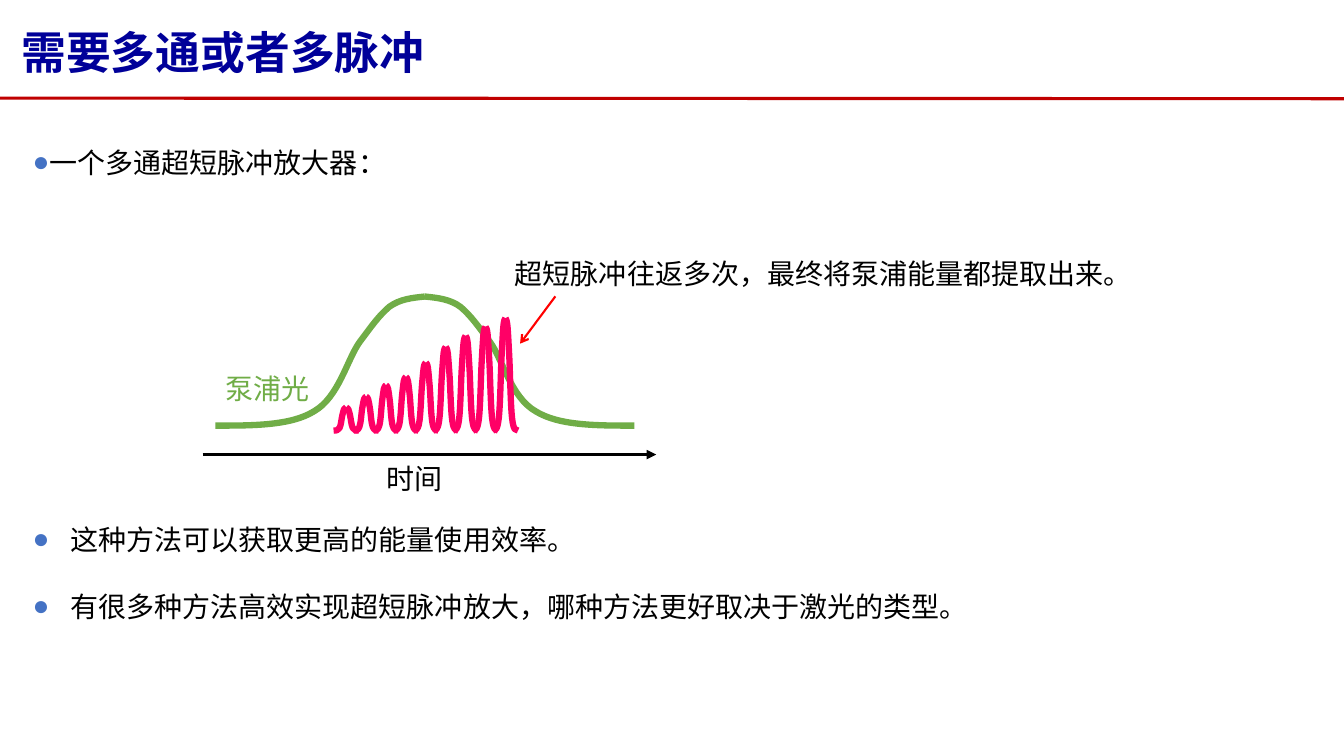
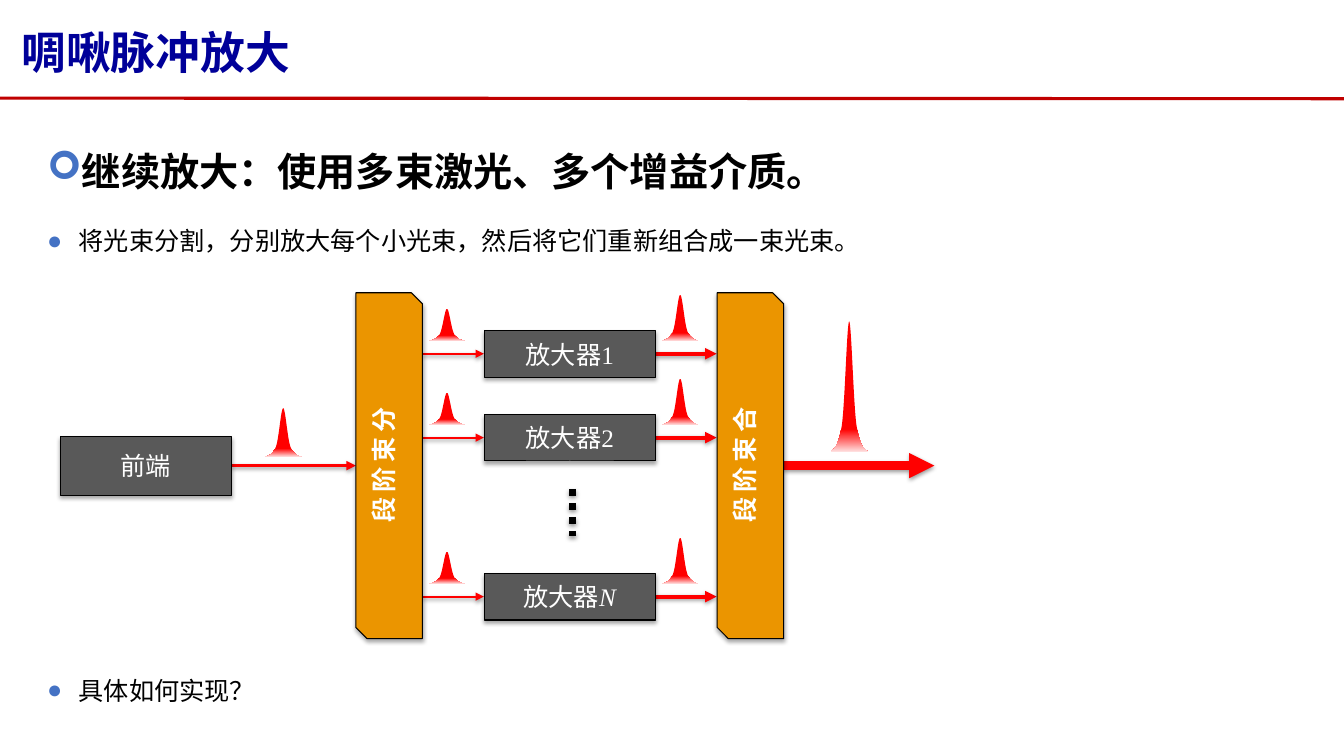
from dataclasses import dataclass

from pptx import Presentation
from pptx.dml.color import RGBColor
from pptx.enum.dml import MSO_LINE
from pptx.enum.shapes import MSO_CONNECTOR, MSO_SHAPE
from pptx.enum.text import MSO_ANCHOR, MSO_AUTO_SIZE, PP_ALIGN
from pptx.oxml import parse_xml
from pptx.oxml.ns import nsdecls
from pptx.util import Pt

rgb = RGBColor.from_string


@dataclass(frozen=True)
class Theme:
    font: str = "Noto Sans CJK SC"
    latin: str = "Times New Roman"
    symbol: str = "Wingdings"
    navy: RGBColor = rgb("000099")
    rule: RGBColor = rgb("C00000")
    bullet: RGBColor = rgb("4472C4")
    black: RGBColor = rgb("000000")
    white: RGBColor = rgb("FFFFFF")
    red: RGBColor = rgb("FF0000")
    pale: RGBColor = rgb("FFDADA")
    pink: RGBColor = rgb("FF0066")
    green: RGBColor = rgb("70AD47")
    grey: RGBColor = rgb("595959")
    orange: RGBColor = rgb("EB9500")
    title: int = 32
    heading: int = 28
    body: int = 20
    small: int = 18


T = Theme()

# Bezier points from the foot (0, 0) to the crest (1, 1)
BELL = [(0, 0), (.18, 0), (.36, 0), (.47, .11), (.59, .22), (.63, .52), (.69, .65),
        (.75, .78), (.78, .85), (.83, .92), (.88, .98), (.94, .99), (1, 1)]
SPIKE = [(0, 0), (.22, .02), (.42, .04), (.6, .2), (.77, .37), (.88, 1), (1, 1)]
SPIKE += [(2 - x, y) for x, y in SPIKE[-2::-1]]


def write(p, text, color, **fmt):
    """Add a run to p; fmt holds font attributes."""
    r = p.add_run()
    r.text = text
    r.font.color.rgb = color
    for name, value in {"name": T.font, **fmt}.items():
        setattr(r.font, name, value)
    r.font._element.append(parse_xml(f'<a:ea {nsdecls("a")} typeface="{T.font}"/>'))


def add_curve(s, profile, left, base, width, height, closed=False):
    """Draw Bezier points as a freeform; a negative width mirrors it."""
    points = [(Pt(left + x * width), Pt(base - y * height)) for x, y in profile]
    builder = s.shapes.build_freeform(*points[0])
    builder.add_line_segments(points[1:], close=closed)
    sp = builder.convert_to_shape()
    sp.shadow.inherit = False
    # Join every three line segments into one cubic segment
    segments = sp._element.xpath(".//a:lnTo")[:len(profile) - 1]
    for i in range(0, len(segments), 3):
        cubic = parse_xml(f'<a:cubicBezTo {nsdecls("a")}/>')
        segments[i].addprevious(cubic)
        for segment in segments[i:i + 3]:
            cubic.append(segment[0])
            segment.getparent().remove(segment)
    return sp


prs = Presentation()
prs.slide_width, prs.slide_height = Pt(960), Pt(540)

# Shared title place
layout = prs.slide_layouts[5]
title = layout.placeholders[0]
for name, value in dict(left=8, top=8.6, width=943, height=61.2).items():
    setattr(title, name, Pt(value))

slides = []
for heading in ("需要多通或者多脉冲", "啁啾脉冲放大"):
    s = prs.slides.add_slide(layout)
    tf = s.shapes.title.text_frame
    tf.auto_size, tf.vertical_anchor = MSO_AUTO_SIZE.NONE, MSO_ANCHOR.MIDDLE
    p = tf.paragraphs[0]
    p.alignment, p.line_spacing = PP_ALIGN.LEFT, 0.9
    write(p, heading, T.navy, size=Pt(T.title), bold=True)
    slides.append(s)
multipass, chirped = slides

# Pump and amplified pulse train: centre, base, half width, height, colour
bells = [(303.5, 304, 149.6, 92.2, T.green)]
bells += [(247.3 + 14.22 * i, 307.6, 9, h, T.pink)
          for i, h in enumerate((16.7, 24.2, 32.4, 38.4, 48.6, 59.8, 67.7, 74.2, 80.4))]
for centre, base, width, height, color in bells:
    for side in (1, -1):
        sp = add_curve(multipass, BELL, centre - side * width, base, side * width, height)
        sp.fill.background()
        sp.line.color.rgb, sp.line.width = color, Pt(4.5)

# Lines: x1, y1, x2, y2, colour, width, arrowhead, shadow
AXIS = 332.6
ROWS = {"1": 252.7, "N": 426.2, "2": 312.6}
lines = [
    (multipass, 0, 70.1, 960, 70.5, T.rule, 2.25, None, False),
    (multipass, 144.7, 324.7, 468.7, 324.7, T.black, 2.25, "triangle", False),
    (multipass, 396.7, 211.7, 371.5, 245.5, T.red, 1.5, "arrow", False),
    (chirped, 165.6, AXIS, 254.2, AXIS, T.red, 2.25, "triangle", True),
    (chirped, 560.2, AXIS, 667.4, AXIS, T.red, 6, "triangle", True),
    (chirped, 409, 349.2, 409, 383, T.black, 5, None, True),
]
for y in ROWS.values():
    lines += [(chirped, 302.4, y, 345.6, y, T.red, 1.5, "triangle", True),
              (chirped, 463.7, y, 511.9, y, T.red, 2.75, "triangle", True)]
drawn, effects = [], []
for s, x1, y1, x2, y2, color, width, head, shadow in lines:
    ln = s.shapes.add_connector(MSO_CONNECTOR.STRAIGHT, Pt(x1), Pt(y1), Pt(x2), Pt(y2))
    ln.line.color.rgb, ln.line.width = color, Pt(width)
    if shadow and not head:
        ln.line.dash_style = MSO_LINE.ROUND_DOT
    if head:
        ln.line._get_or_add_ln().append(
            parse_xml(f'<a:tailEnd {nsdecls("a")} type="{head}"/>'))
    drawn.append(ln)
    effects.append((ln, 38 if shadow else 0, 1.6))

# The title rule belongs to the layout
layout.shapes._spTree.append(drawn[0]._element)

# Blocks: kind, place, fill, rotation, label, suffix
blocks = [(MSO_SHAPE.ROUNDED_RECTANGLE, (43, 311.8, 122.4, 41.8), T.grey, 0, "前端", "")]
blocks += [(MSO_SHAPE.SNIP_2_DIAG_RECTANGLE, (x, 308.9, 247, 47.5), T.orange, 270, label, "")
           for x, label in ((154.5, "分束阶段"), (412.6, "合束阶段"))]
blocks += [(MSO_SHAPE.RECTANGLE, (345.8, y - 16.5, 122.4, 33.2), T.grey, 0, "放大器", n)
           for n, y in ROWS.items()]
for kind, place, fill, rotation, label, suffix in blocks:
    sp = chirped.shapes.add_shape(kind, *map(Pt, place))
    if kind == MSO_SHAPE.ROUNDED_RECTANGLE:
        sp.adjustments[0] = 0
    sp.fill.solid()
    sp.fill.fore_color.rgb = fill
    sp.line.color.rgb, sp.line.width = T.black, Pt(0.75)
    tf = sp.text_frame
    tf.word_wrap, tf.vertical_anchor = True, MSO_ANCHOR.MIDDLE
    if rotation:
        sp.rotation = rotation
        sp._element.spPr.xfrm.set("flipH", "1")
        tf._txBody.bodyPr.set("vert", "eaVert")
    p = tf.paragraphs[0]
    p.alignment = PP_ALIGN.CENTER
    write(p, label, T.white, size=Pt(T.small), bold=bool(rotation))
    if suffix:
        write(p, suffix, T.white, size=Pt(T.small), name=T.latin, italic=suffix == "N")
    effects.append((sp, 35, 1.8))

# Soft shadow, or none where alpha is 0
for sp, alpha, distance in effects:
    shadow = (f'<a:outerShdw blurRad="{Pt(3.1)}" dist="{Pt(distance)}" dir="5400000" '
              f'rotWithShape="0"><a:srgbClr val="000000"><a:alpha val="{alpha * 1000}"/>'
              '</a:srgbClr></a:outerShdw>') if alpha else ""
    sp._element.spPr.append(
        parse_xml(f'<a:effectLst {nsdecls("a")}>{shadow}</a:effectLst>'))

# Laser pulses: left, base, height
spikes = [(189.2, 326.3, 34.9), (593.5, 322.4, 92.9)]
for y in ROWS.values():
    spikes += [(306.2, y - 9.2, 23), (472.8, y - 9.2, 33)]
for left, base, height in spikes:
    sp = add_curve(chirped, SPIKE, left, base, 13.1, height, closed=True)
    sp.line.fill.background()
    sp.fill.gradient()
    sp.fill.gradient_angle = 270
    for stop, color, position in zip(sp.fill.gradient_stops, (T.red, T.pale), (0.83, 1)):
        stop.color.rgb, stop.position = color, position

# Texts: place, paragraphs, size, colour, bullet, indent, wrap
texts = [
    (multipass, (16.2, 100.1, 494, 31.7), ["一个多通超短脉冲放大器："],
     T.body, T.black, "●", 0, True),
    (multipass, (16.2, 369.4, 679, 79.9),
     ["这种方法可以获取更高的能量使用效率。",
      "有很多种方法高效实现超短脉冲放大，哪种方法更好取决于激光的类型。"],
     T.body, T.black, "●", 27, True),
    (multipass, (269.3, 326.2, 54.7, 31.7), ["时间"], T.body, T.black, "", 0, False),
    (multipass, (153.8, 262.1, 75, 31.7), ["泵浦光"], T.body, T.green, "", 0, False),
    (multipass, (360.7, 180, 470.2, 31.7), ["超短脉冲往返多次，最终将泵浦能量都提取出来。"],
     T.body, T.black, "", 0, True),
    (chirped, (26.6, 101.5, 666.7, 41), ["继续放大：使用多束激光、多个增益介质。"],
     T.heading, T.black, "➢", 0, True),
    (chirped, (26.6, 157.7, 653.8, 28.8),
     ["将光束分割，分别放大每个小光束，然后将它们重新组合成一束光束。"],
     T.small, T.black, "●", 22.5, True),
    (chirped, (26.6, 478.8, 162.7, 28.8), ["具体如何实现？"],
     T.small, T.black, "●", 22.5, False),
]
for s, place, paragraphs, size, color, bullet, indent, wrap in texts:
    tf = s.shapes.add_textbox(*map(Pt, place)).text_frame
    tf.word_wrap, tf.auto_size = wrap, MSO_AUTO_SIZE.SHAPE_TO_FIT_TEXT
    for i, text in enumerate(paragraphs):
        p = tf.paragraphs[0] if i == 0 else tf.add_paragraph()
        p.line_spacing = Pt(1.2 * size)
        if i:
            p.space_before = Pt(24)
        write(p, text, color, size=Pt(size), bold=size == T.heading)
        if bullet:
            pPr = p._p.get_or_add_pPr()
            pPr.set("marL", str(Pt(indent)))
            pPr.set("indent", str(-Pt(indent)))
            face = T.symbol if bullet == "➢" else T.latin
            for xml in (f'<a:buClr {nsdecls("a")}><a:srgbClr val="{T.bullet}"/></a:buClr>',
                        f'<a:buFont {nsdecls("a")} typeface="{face}"/>',
                        f'<a:buChar {nsdecls("a")} char="{bullet}"/>'):
                pPr.append(parse_xml(xml))

prs.save("out.pptx")
